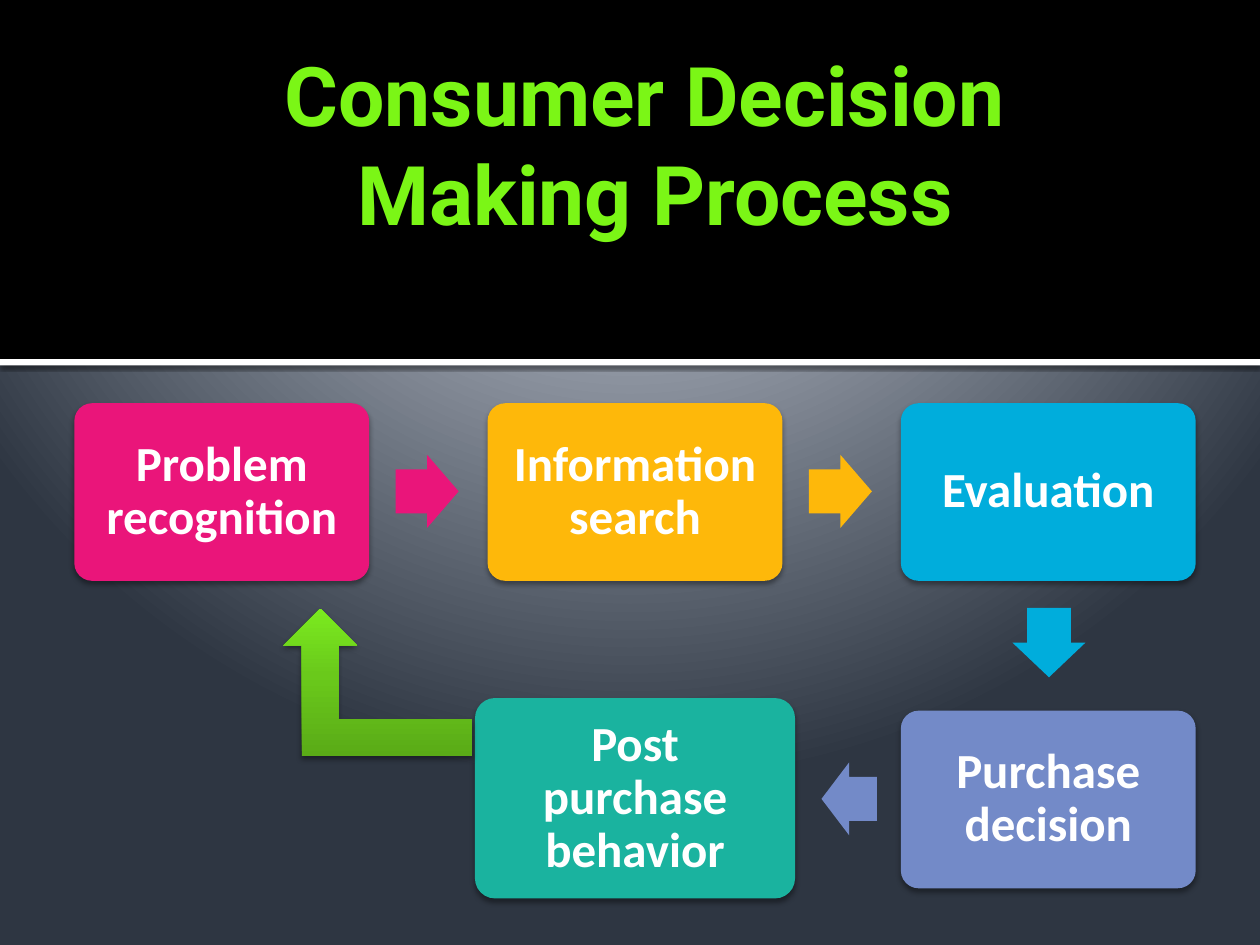
from lxml import etree
from pptx import Presentation
from pptx.dml.color import RGBColor
from pptx.enum.shapes import MSO_SHAPE as Geo
from pptx.enum.text import MSO_ANCHOR as Anchor, PP_ALIGN as Align
from pptx.oxml.ns import qn
from pptx.util import Inches, Pt

BLACK = RGBColor(0x00, 0x00, 0x00)
WHITE = RGBColor(0xFF, 0xFF, 0xFF)
LIME = RGBColor(0x7B, 0xF6, 0x16)
PINK = RGBColor(0xEA, 0x15, 0x7A)
AMBER = RGBColor(0xFE, 0xB8, 0x0A)
BLUE = RGBColor(0x00, 0xAD, 0xDC)
SLATE = RGBColor(0x73, 0x8A, 0xC8)
TEAL = RGBColor(0x1A, 0xB3, 0x9F)
GREENS = [(0, RGBColor(0x5A, 0xAB, 0x17)), (55, RGBColor(0x6A, 0xC9, 0x1B)),
          (100, RGBColor(0x7B, 0xEB, 0x1F))]
GREYS = [(0, RGBColor(0xBF, 0xC5, 0xD1)), (12, RGBColor(0xBF, 0xC5, 0xD1)),
         (20, RGBColor(0xBD, 0xC4, 0xD0)), (100, RGBColor(0x2E, 0x36, 0x42))]

# Shadow values: opacity %, blur and distance in points
SOFT = (38, 3.1, 2)
EDGE = (60, 2.5, 0.8)


def add(up, tag, **attrs):
    """Append an XML child with the given attributes."""
    node = etree.SubElement(up, qn(tag))
    for name, value in attrs.items():
        node.set(name, str(value))
    return node


def blend(up, stops):
    """Append a gradient fill and return it for its direction."""
    grad = add(up, "a:gradFill", rotWithShape=1)
    group = add(grad, "a:gsLst")
    for spot, color in stops:
        add(add(group, "a:gs", pos=spot * 1000), "a:srgbClr", val=color)
    return grad


class Deck:
    face = "Calibri"
    size = 28
    inset = 0.12

    def __init__(self):
        self.prs = Presentation()
        self.prs.slide_width = Inches(10)
        self.prs.slide_height = Inches(7.5)
        self.slide = self.prs.slides.add_slide(self.prs.slide_layouts[5])

    def back(self, stops):
        page = self.slide.element.find(qn("p:cSld"))
        bg = etree.Element(qn("p:bg"))
        page.insert(0, bg)
        props = add(bg, "p:bgPr")
        way = add(blend(props, stops), "a:path", path="circle")
        add(way, "a:fillToRect", l=10000, t=-25000, r=10000, b=125000)
        add(props, "a:effectLst")

    def style(self, frame, text, looks, **format):
        """Write centred text and set its frame and font values."""
        for name, value in format.items():
            setattr(frame, name, value)
        frame.text = text
        for para in frame.paragraphs:
            para.alignment = Align.CENTER
            for run in para.runs:
                run.font.color.rgb = looks["color"]
                for name in ("name", "size", "bold"):
                    setattr(run.font, name, looks[name])

    def title(self, text, x, y, w, h):
        shape = self.slide.shapes.title
        place = dict(left=x, top=y, width=w, height=h)
        for name, value in place.items():
            setattr(shape, name, Inches(value))
        looks = dict(name="Roboto", size=Pt(47), bold=True, color=LIME)
        self.style(shape.text_frame, text, looks, word_wrap=True,
                   vertical_anchor=Anchor.BOTTOM, margin_top=0,
                   margin_bottom=0)

    def shape(self, geo, x, y, w, h, color=None, adj=(), shade=None, turn=0):
        item = self.slide.shapes.add_shape(
            geo, Inches(x), Inches(y), Inches(w), Inches(h))
        item.line.fill.background()
        item.rotation = turn
        for index, value in enumerate(adj):
            item.adjustments[index] = value
        if color is not None:
            item.fill.solid()
            item.fill.fore_color.rgb = color
        item.shadow.inherit = False
        if shade:
            alpha, blur, dist = shade
            effect = item.element.spPr.find(qn("a:effectLst"))
            drop = add(effect, "a:outerShdw", blurRad=Pt(blur), dist=Pt(dist),
                       dir=5400000, algn="t", rotWithShape=0)
            tint = add(drop, "a:srgbClr", val=BLACK)
            add(tint, "a:alpha", val=alpha * 1000)
        return item

    def step(self, text, color, x, y, w=2.34, h=1.41):
        box = self.shape(Geo.ROUNDED_RECTANGLE, x, y, w, h, color,
                         adj=(0.1,), shade=SOFT)
        gap = Inches(self.inset)
        looks = dict(name=self.face, size=Pt(self.size), bold=True,
                     color=WHITE)
        self.style(box.text_frame, text, looks, word_wrap=True,
                   vertical_anchor=Anchor.MIDDLE, margin_left=gap,
                   margin_right=gap, margin_top=gap, margin_bottom=gap)
        box.text_frame.paragraphs[0].line_spacing = 0.9

    def arrow(self, color, x, y, w=0.5, turn=0):
        self.shape(Geo.RIGHT_ARROW, x, y, w, 0.58, color,
                   adj=(0.6, 0.5), turn=turn)

    def bend(self, stops, x, y, w, h):
        item = self.shape(Geo.BENT_UP_ARROW, x, y, w, h, shade=SOFT)
        props = item.element.spPr
        props.find(qn("a:xfrm")).set("flipH", "1")
        grad = blend(props, stops)
        add(grad, "a:lin", ang=16200000, scaled=0)
        props.find(qn("a:prstGeom")).addnext(grad)


def main():
    deck = Deck()

    # Background and title band
    deck.back(GREYS)
    band = deck.shape(Geo.RECTANGLE, 0, 0, 10, 2.85, BLACK)
    rule = deck.shape(Geo.RECTANGLE, 0, 2.85, 10, 0.05, WHITE, shade=EDGE)
    title = deck.slide.shapes.title
    for part in (band, rule):
        title.element.addprevious(part.element)
    deck.title("Consumer Decision \vMaking Process", 0.82, 0.13, 8.76, 1.79)

    # Top row, with an arrow after each step but the last
    left, pitch = 0.59, 3.28
    steps = [("Problem recognition", PINK), ("Information search", AMBER),
             ("Evaluation", BLUE)]
    for index, (text, color) in enumerate(steps):
        x = left + index * pitch
        deck.step(text, color, x, 3.2)
        if index < len(steps) - 1:
            deck.arrow(color, x + 2.55, 3.61)

    # Down and back along the bottom row
    deck.arrow(BLUE, 8.05, 4.81, 0.55, turn=90)
    deck.step("Purchase decision", SLATE, left + 2 * pitch, 5.64)
    deck.arrow(SLATE, 6.52, 6.05, 0.44, turn=180)
    deck.step("Post purchase behavior", TEAL, 3.77, 5.54, 2.54, 1.59)

    # Return to the first step
    deck.bend(GREENS, 2.25, 4.83, 1.5, 1.17)

    deck.prs.save("out.pptx")


if __name__ == "__main__":
    main()
